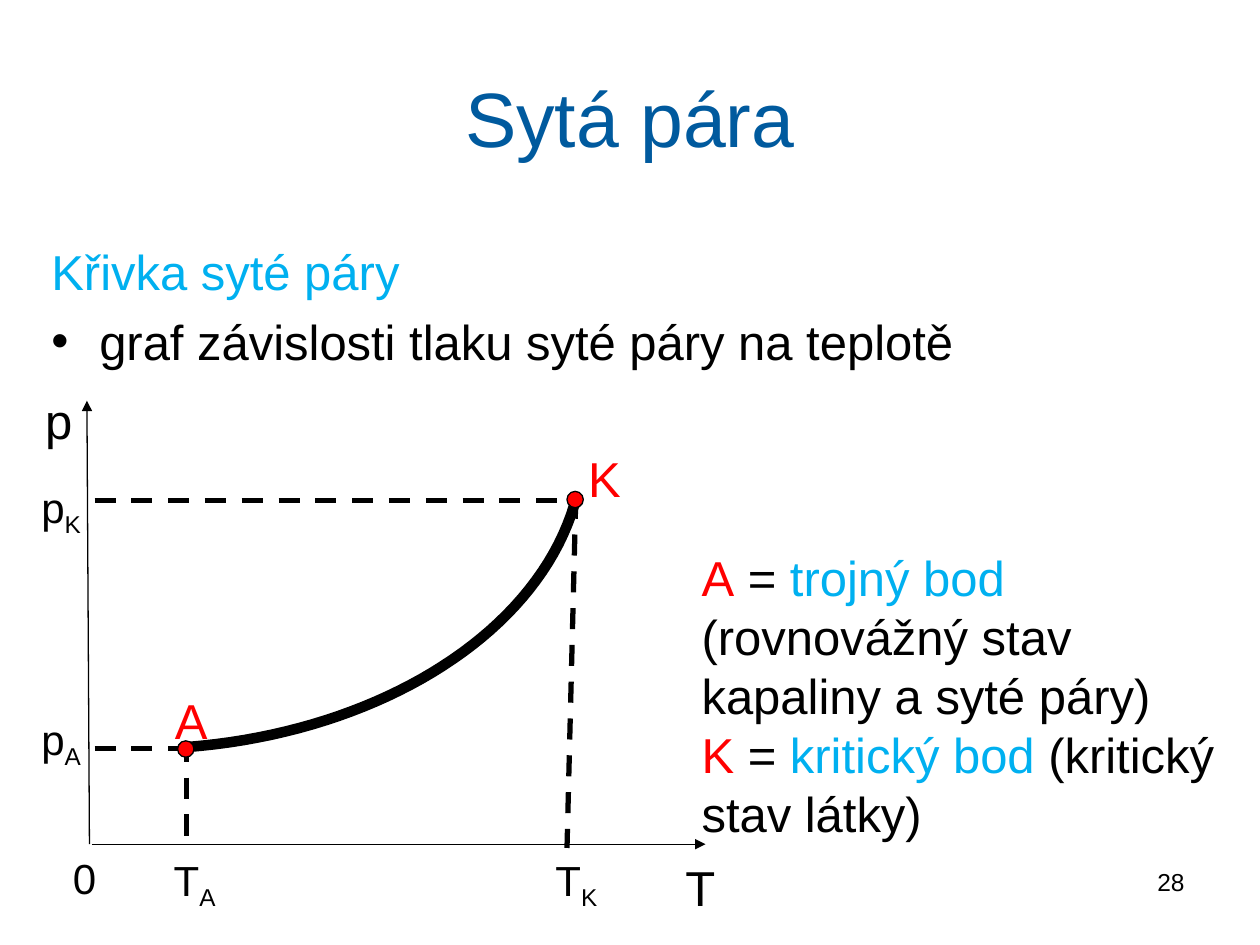
import pptx
import pptx.util
import pptx.dml.color
import pptx.enum.dml
import pptx.enum.shapes
import pptx.enum.text
import pptx.oxml
import pptx.oxml.ns
from typing import NamedTuple

Inches = pptx.util.Inches
Pt = pptx.util.Pt
ALIGN = pptx.enum.text.PP_ALIGN
DASH = pptx.enum.dml.MSO_LINE.DASH
BLACK, RED, CYAN, NAVY = "000000", "FF0000", "00B0F0", "005A9E"


class Part(NamedTuple):
    text: str
    hue: str = BLACK
    base: int = 0


class Label(NamedTuple):
    left: float
    top: float
    width: float
    height: float
    size: int
    rows: list[list[Part]]
    wrap: bool = True
    align: ALIGN = ALIGN.LEFT
    anchor: pptx.enum.text.MSO_ANCHOR = pptx.enum.text.MSO_ANCHOR.TOP


class Line(NamedTuple):
    start: tuple[float, float]
    end: tuple[float, float]
    width: float = 3
    arrow: bool = False


class Dot(NamedTuple):
    left: float
    top: float


def color(code: str) -> pptx.dml.color.RGBColor:
    return pptx.dml.color.RGBColor.from_string(code)


def node(tag: str, **attrs: str):
    item = pptx.oxml.parse_xml(f"<a:{tag} {pptx.oxml.ns.nsdecls('a')}/>")
    for key, value in attrs.items():
        item.set(key, value)
    return item


def style(target, values: dict) -> None:
    for key, value in values.items():
        setattr(target, key, value)


def write(slide, label: Label):
    place = map(Inches, (label.left, label.top, label.width, label.height))
    frame = slide.shapes.add_textbox(*place).text_frame
    style(frame, {"word_wrap": label.wrap, "vertical_anchor": label.anchor})
    for i, row in enumerate(label.rows):
        para = frame.add_paragraph() if i else frame.paragraphs[0]
        para.alignment = label.align
        for part in row:
            for j, piece in enumerate(part.text.split("\n")):
                if j:
                    para.add_line_break()
                if not piece:
                    continue
                run = para.add_run()
                run.text = piece
                style(run.font, {"name": "Arial", "size": Pt(label.size)})
                run.font.color.rgb = color(part.hue)
                if part.base:
                    run._r.get_or_add_rPr().set("baseline", str(part.base))
    return frame


def rule(slide, line: Line) -> None:
    ends = map(Inches, (*line.start, *line.end))
    kind = pptx.enum.shapes.MSO_CONNECTOR.STRAIGHT
    shape = slide.shapes.add_connector(kind, *ends)
    shape.line.color.rgb = color(BLACK)
    style(shape.line, {"width": Pt(line.width),
                       "dash_style": None if line.arrow else DASH})
    if line.arrow:
        shape.line._get_or_add_ln().append(node("tailEnd", type="triangle"))
    shape._element.spPr.append(node("effectLst"))


def curve(slide, knots: list[tuple[float, float]], steps: int = 40) -> None:
    points = []
    for i in range(steps + 1):
        t = i / steps
        u = 1 - t
        mix = (u ** 3, 3 * u * u * t, 3 * u * t * t, t ** 3)
        points.append(tuple(Inches(sum(m * k for m, k in zip(mix, axis)))
                            for axis in zip(*knots)))
    pen = slide.shapes.build_freeform(*points[0])
    pen.add_line_segments(points[1:], close=False)
    shape = pen.convert_to_shape()
    shape.shadow.inherit = False
    shape.fill.background()
    shape.line.color.rgb = color(BLACK)
    shape.line.width = Pt(6)


def mark(slide, dot: Dot) -> None:
    place = map(Inches, (dot.left, dot.top, 0.13, 0.13))
    shape = slide.shapes.add_shape(pptx.enum.shapes.MSO_SHAPE.OVAL, *place)
    shape.shadow.inherit = False
    shape.fill.solid()
    shape.fill.fore_color.rgb = color(RED)
    shape.line.color.rgb = color(BLACK)
    shape.line.width = Pt(0.75)


def name(left: float, top: float, text: str, hue: str = BLACK,
         size: int = 28) -> Label:
    return Label(left, top, 0.38, 0.45, size, [[Part(text, hue)]], False)


def tick(left: float, top: float, text: str, sub: str) -> Label:
    return Label(left, top, 1.05, 0.4, 24,
                 [[Part(text), Part(sub, base=-25000)]])


def main() -> None:
    deck = pptx.Presentation()
    style(deck, {"slide_width": Inches(10), "slide_height": Inches(7.5)})
    slide = deck.slides.add_slide(deck.slide_layouts[6])

    write(slide, Label(0.5, 0.3, 9, 1.25, 44, [[Part("Sytá pára", NAVY)]],
                       align=ALIGN.CENTER,
                       anchor=pptx.enum.text.MSO_ANCHOR.MIDDLE))
    body = write(slide, Label(0.31, 1.87, 9, 1.1, 28, [
        [Part("Křivka syté páry", CYAN)],
        [Part("graf závislosti tlaku syté páry na teplotě")]]))
    item = body.paragraphs[1]
    item.space_before = Pt(6)
    props = item._p.get_or_add_pPr()
    props.set("marL", str(Inches(0.38)))
    props.set("indent", str(Inches(-0.38)))
    props.append(node("buFont", typeface="Arial"))
    props.append(node("buChar", char="•"))

    lines = [
        Line((0.71, 6.7), (0.69, 3.18), 0.75, True),
        Line((0.73, 6.7), (5.6, 6.7), 0.75, True),
        Line((0.75, 3.97), (4.57, 3.97)),
        Line((4.57, 3.95), (4.5, 6.73)),
        Line((1.48, 5.88), (1.48, 6.66)),
        Line((0.75, 5.94), (1.41, 5.94)),
    ]
    for line in lines:
        rule(slide, line)
    curve(slide, [(1.48, 5.93), (3.04, 5.81), (4.31, 5), (4.58, 3.93)])
    for dot in [Dot(4.5, 3.9), Dot(1.41, 5.88)]:
        mark(slide, dot)

    labels = [
        name(0.26, 3.05, "p"),
        name(0.48, 6.72, "0", size=24),
        name(5.34, 6.76, "T"),
        name(4.57, 3.51, "K", RED),
        name(1.29, 5.43, "A", RED),
        tick(0.23, 5.61, "p", "A"),
        tick(0.23, 3.77, "p", "K"),
        tick(4.31, 6.73, "T", "K"),
        tick(1.28, 6.73, "T", "A"),
        Label(5.47, 4.3, 4.53, 2.46, 28, [
            [Part("A", RED), Part(" = "), Part("trojný bod", CYAN),
             Part("\n(rovnovážný stav\nkapaliny a syté páry)")],
            [Part("K", RED), Part(" = "), Part("kritický bod ", CYAN),
             Part("(kritický\nstav látky)")]]),
        Label(7.17, 6.83, 2.33, 0.52, 14, [[Part("28")]], align=ALIGN.RIGHT),
    ]
    for label in labels:
        write(slide, label)
    deck.save("out.pptx")


if __name__ == "__main__":
    main()
